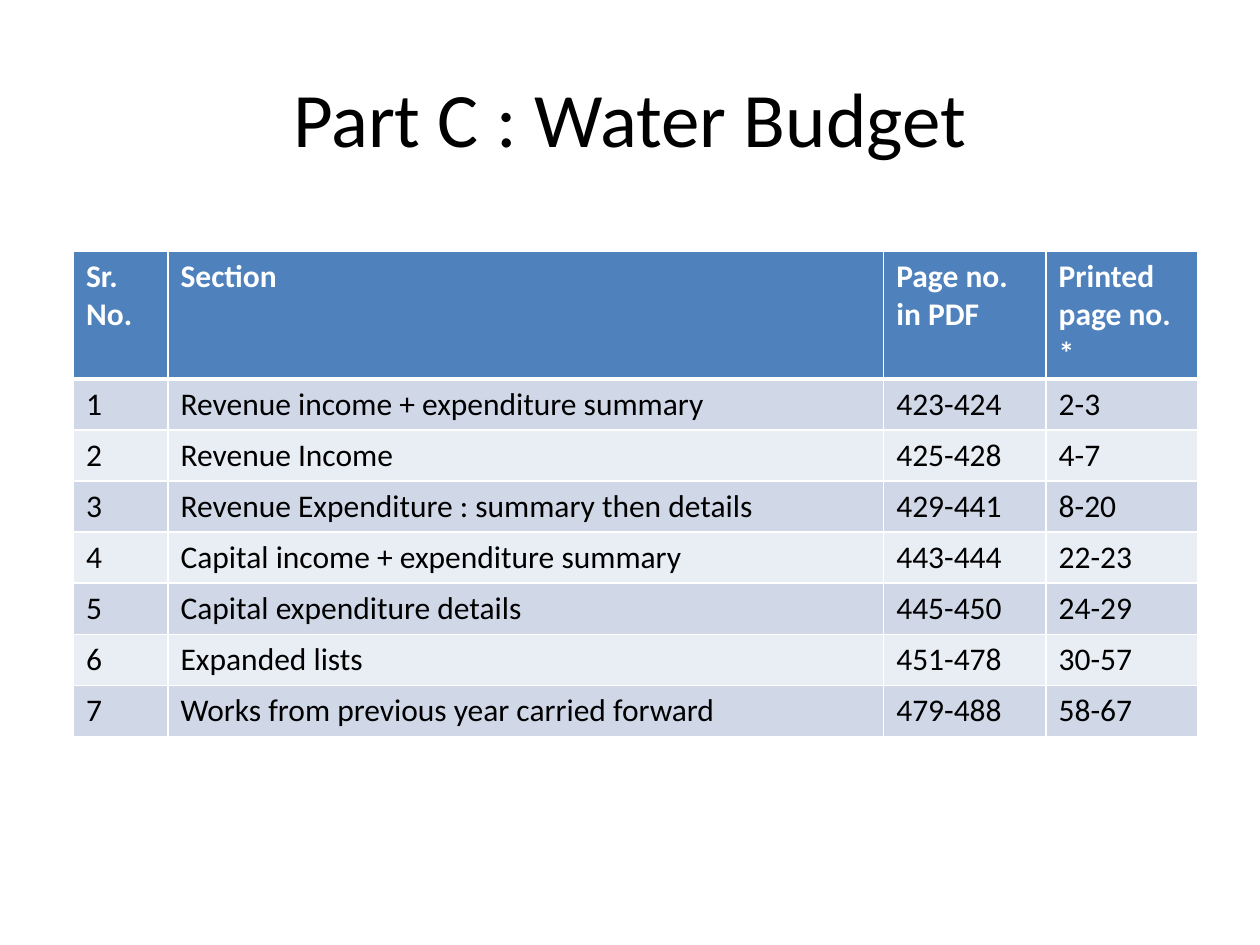
"""Build the water budget contents slide with its page table."""
from dataclasses import dataclass

from lxml import etree
from pptx import Presentation
from pptx.dml.color import RGBColor
from pptx.enum import text
from pptx.oxml.ns import qn
from pptx.util import Pt

TITLE = "Part C : Water Budget"
HEADER = ("Sr. No.", "Section", "Page no. in PDF", "Printed page no. *")
SECTIONS = [
    ("Revenue income + expenditure summary", "423-424", "2-3"),
    ("Revenue Income", "425-428", "4-7"),
    ("Revenue Expenditure : summary then details", "429-441", "8-20"),
    ("Capital income + expenditure summary", "443-444", "22-23"),
    ("Capital expenditure details", "445-450", "24-29"),
    ("Expanded lists", "451-478", "30-57"),
    ("Works from previous year carried forward", "479-488", "58-67"),
]
COLUMN_WIDTHS = (54, 409, 92.8, 86.4)
HEADER_HEIGHT, ROW_HEIGHT = 73, 29.2
TABLE_LEFT, TABLE_TOP = 42, 143.5


@dataclass(frozen=True)
class Theme:
    font: str = "Calibri"
    title_size: float = 44
    table_size: float = 18
    ink: str = "000000"
    white: str = "FFFFFF"
    header: str = "4F81BD"
    bands: tuple = ("D0D8E8", "E9EDF4")
    rule: float = 1
    header_rule: float = 3


THEME = Theme()


def style_paragraph(para, size, color, bold=False):
    """Set the font of a whole paragraph."""
    para.font.name = THEME.font
    para.font.size = Pt(size)
    para.font.bold = bold
    para.font.color.rgb = RGBColor.from_string(color)


def add_borders(cell, top, bottom):
    """Draw white rules on all four sides of a cell."""
    properties = cell._tc.get_or_add_tcPr()
    sides = {"L": THEME.rule, "R": THEME.rule, "T": top, "B": bottom}
    for index, (side, width) in enumerate(sides.items()):
        line = etree.Element(qn(f"a:ln{side}"), w=str(Pt(width)))
        fill = etree.SubElement(line, qn("a:solidFill"))
        etree.SubElement(fill, qn("a:srgbClr"), val=THEME.white)
        properties.insert(index, line)


def add_title(page):
    """Add the centred title."""
    box = page.shapes.add_textbox(Pt(36), Pt(21.6), Pt(648), Pt(90))
    frame = box.text_frame
    frame.word_wrap = True
    frame.vertical_anchor = text.MSO_ANCHOR.MIDDLE
    para = frame.paragraphs[0]
    para.text = TITLE
    para.alignment = text.PP_ALIGN.CENTER
    style_paragraph(para, THEME.title_size, THEME.ink)


def add_section_table(page):
    """Add the table of numbered sections and their pages."""
    rows = [HEADER] + [(str(number), *section) for number, section in enumerate(SECTIONS, 1)]
    heights = [HEADER_HEIGHT] + [ROW_HEIGHT] * len(SECTIONS)
    table = page.shapes.add_table(
        len(rows), len(HEADER), Pt(TABLE_LEFT), Pt(TABLE_TOP),
        Pt(sum(COLUMN_WIDTHS)), Pt(sum(heights))).table
    for column, width in zip(table.columns, COLUMN_WIDTHS):
        column.width = Pt(width)
    for r, (values, height) in enumerate(zip(rows, heights)):
        table.rows[r].height = Pt(height)
        is_header = r == 0
        fill = THEME.header if is_header else THEME.bands[(r - 1) % 2]
        color = THEME.white if is_header else THEME.ink
        top = THEME.header_rule if r == 1 else THEME.rule
        bottom = THEME.header_rule if is_header else THEME.rule
        for c, value in enumerate(values):
            cell = table.cell(r, c)
            cell.text = value
            cell.fill.solid()
            cell.fill.fore_color.rgb = RGBColor.from_string(fill)
            add_borders(cell, top, bottom)
            style_paragraph(cell.text_frame.paragraphs[0], THEME.table_size, color, is_header)


def main():
    """Build and save the deck."""
    deck = Presentation()
    deck.slide_width, deck.slide_height = Pt(720), Pt(540)
    page = deck.slides.add_slide(deck.slide_layouts[6])
    add_title(page)
    add_section_table(page)
    deck.save("out.pptx")


if __name__ == "__main__":
    main()
